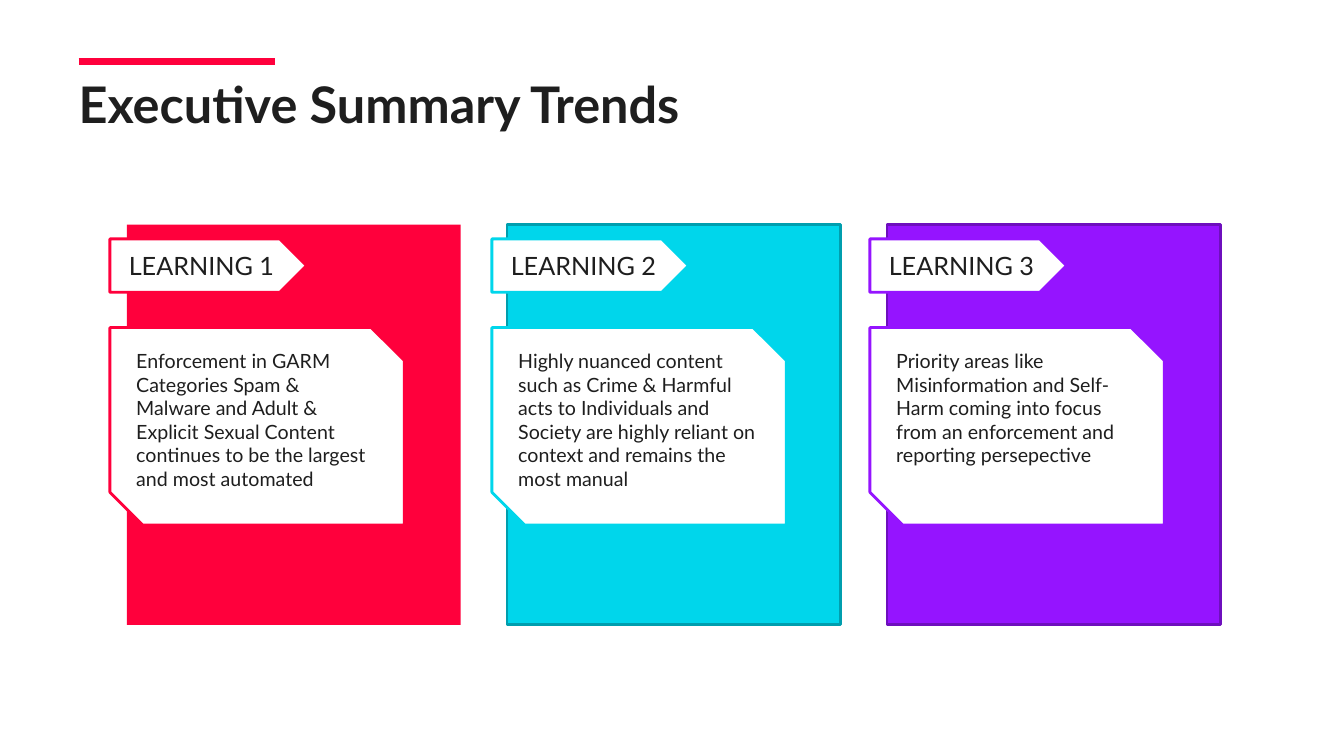
from lxml import etree
from pptx import Presentation
from pptx.dml.color import RGBColor
from pptx.enum.shapes import MSO_CONNECTOR, MSO_SHAPE as SHAPE
from pptx.enum.text import MSO_ANCHOR as ANCHOR, MSO_AUTO_SIZE, PP_ALIGN as ALIGN
from pptx.oxml.ns import qn
from pptx.util import Pt

FONT = "Lato"
INK, WHITE, RED = "1E1E1E", "FFFFFF", "FF003C"
CARD_LEFT, CARD_PITCH = 90.72, 271.44

# Fill, card outline, left edge of the labels, note
LEARNINGS = [
    (RED, None, 78.48,
     "Enforcement in GARM Categories Spam & Malware and Adult & Explicit "
     "Sexual Content continues to be the largest and most automated"),
    ("00D6EB", "009EAE", 351.36,
     "Highly nuanced content such as Crime & Harmful acts to Individuals and "
     "Society are highly reliant on context and remains the most manual"),
    ("9514FF", "6E0FBD", 621.36,
     "Priority areas like Misinformation and Self-Harm coming into focus from "
     "an enforcement and reporting persepective"),
]


def rgb(color):
    return RGBColor.from_string(color)


def set_text(sp, text, size, bold=False, align=ALIGN.LEFT, **frame):
    tf = sp.text_frame
    frame_format = {"word_wrap": True, "auto_size": MSO_AUTO_SIZE.NONE,
                    "vertical_anchor": ANCHOR.TOP, **frame}
    for name, value in frame_format.items():
        setattr(tf, name, value)
    p = tf.paragraphs[0]
    p.alignment = align
    r = p.add_run()
    r.text = text
    for name, value in {"name": FONT, "size": Pt(size), "bold": bold}.items():
        setattr(r.font, name, value)
    r.font.color.rgb = rgb(INK)


def add_box(s, kind, box, fill, line=None):
    sp = s.shapes.add_shape(kind, *map(Pt, box))
    sp.shadow.inherit = False
    sp.fill.solid()
    sp.fill.fore_color.rgb = rgb(fill)
    if line:
        sp.line.color.rgb = rgb(line)
        sp.line.width = Pt(2)
    else:
        sp.line.fill.background()
    return sp


def add_rule(s, x1, x2, y, color, width):
    """Draw a horizontal accent line."""
    rule = s.shapes.add_connector(MSO_CONNECTOR.STRAIGHT, Pt(x1), Pt(y), Pt(x2), Pt(y))
    rule.line.color.rgb = rgb(color)
    rule.line.width = Pt(width)
    etree.SubElement(rule._element.spPr, qn("a:effectLst"))


def add_title(s, text):
    title = s.shapes.title
    box = {"left": 56.16, "top": 43.92, "width": 831.6, "height": 109.44}
    for name, value in box.items():
        setattr(title, name, Pt(value))
    set_text(title, text, 36, bold=True, margin_left=0, margin_right=0,
             margin_top=Pt(8.64), margin_bottom=0)


def add_learning(s, index, color, outline, left, note):
    """Draw a card with its arrow label and its note."""
    card_left = CARD_LEFT + index * CARD_PITCH
    add_box(s, SHAPE.RECTANGLE, (card_left, 160.56, 238.32, 285.84), color, outline)
    tag = add_box(s, SHAPE.PENTAGON, (left, 170.64, 140.4, 38.16), WHITE, color)
    set_text(tag, f"LEARNING {index + 1}", 18, align=ALIGN.CENTER,
             vertical_anchor=ANCHOR.MIDDLE)
    panel = add_box(s, SHAPE.SNIP_2_DIAG_RECTANGLE, (left, 234, 210.24, 141.12),
                    WHITE, color)
    set_text(panel, note, 14)


def main():
    prs = Presentation()
    prs.slide_width, prs.slide_height = Pt(960), Pt(540)
    s = prs.slides.add_slide(prs.slide_layouts[5])
    add_title(s, "Executive Summary Trends")
    add_rule(s, 56.16, 196.56, 43.92, RED, 5)
    for index, learning in enumerate(LEARNINGS):
        add_learning(s, index, *learning)
    prs.save("out.pptx")


if __name__ == "__main__":
    main()
